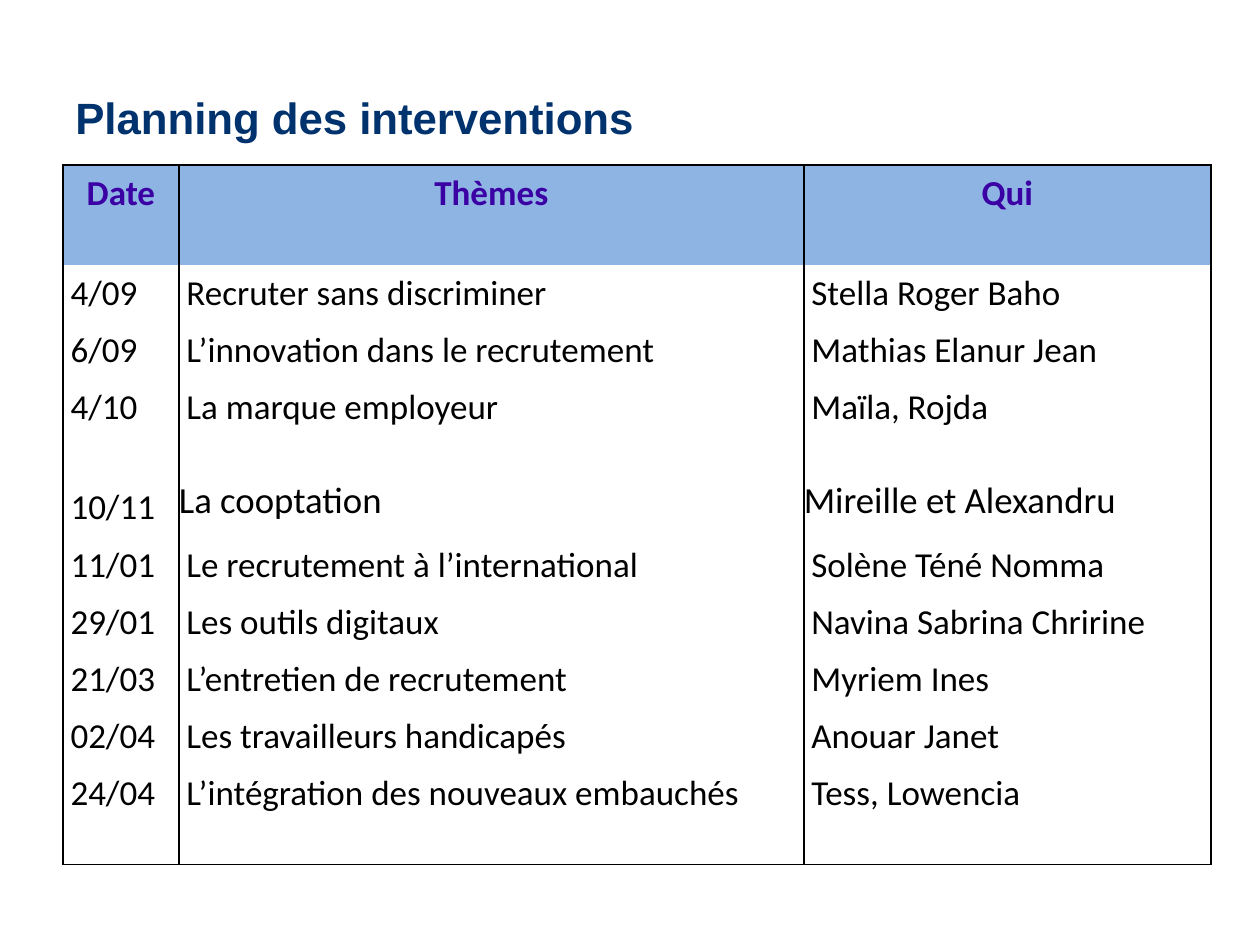
"""Builds the slide that lists the planned talks by date, theme and speakers."""
from dataclasses import dataclass

from lxml import etree
from pptx import Presentation
from pptx import util as u
from pptx.dml.color import RGBColor
from pptx.enum import text
from pptx.oxml import ns

NAVY, PURPLE, HEADER_BLUE, BLACK = "00326E", "3B00A4", "8EB4E3", "000000"
COLUMN_WIDTHS = (0.92, 4.96, 3.23)
SHORT_ROW, TALL_ROW = 0.45, 0.79
CELL_INSET = 0.06


@dataclass(frozen=True)
class Talk:
    date: str
    theme: str
    speakers: str
    height: float = SHORT_ROW
    size: float = 20
    inset: float = CELL_INSET


TALKS = (
    Talk("4/09", "Recruter sans discriminer", "Stella Roger Baho"),
    Talk("6/09", "L’innovation dans le recrutement", "Mathias Elanur Jean"),
    Talk("4/10", "La marque employeur", "Maïla, Rojda", height=TALL_ROW),
    Talk("10/11", "La cooptation", "Mireille et Alexandru", height=0.46, size=21, inset=0),
    Talk("11/01", "Le recrutement à l’international", "Solène Téné Nomma"),
    Talk("29/01", "Les outils digitaux", "Navina Sabrina Chririne"),
    Talk("21/03", "L’entretien de recrutement", "Myriem Ines"),
    Talk("02/04", "Les travailleurs handicapés", "Anouar Janet"),
    Talk("24/04", "L’intégration des nouveaux embauchés", "Tess, Lowencia", height=TALL_ROW),
)


def rgb(value: str) -> RGBColor:
    return RGBColor.from_string(value)


def write(frame, wording: str, *, size: float, font: str = "Calibri", color: str = BLACK,
          bold: bool = False, align=text.PP_ALIGN.LEFT) -> None:
    frame.word_wrap = True
    paragraph = frame.paragraphs[0]
    paragraph.alignment = align
    run = paragraph.add_run()
    run.text = wording
    run.font.name = font
    run.font.size = u.Pt(size)
    run.font.bold = bold
    run.font.color.rgb = rgb(color)


def set_insets(cell, inset: float) -> None:
    cell.margin_left = cell.margin_right = u.Inches(inset)
    cell.margin_top = cell.margin_bottom = u.Inches(inset)


def set_borders(cell, visible: str) -> None:
    properties = cell._tc.get_or_add_tcPr()
    for side in "LRTB":
        border = etree.SubElement(properties, ns.qn(f"a:ln{side}"), w=str(u.Pt(1)))
        if side in visible:
            fill = etree.SubElement(border, ns.qn("a:solidFill"))
            etree.SubElement(fill, ns.qn("a:srgbClr"), val=BLACK)
        else:
            etree.SubElement(border, ns.qn("a:noFill"))


def draw_title(slide, wording: str) -> None:
    title = slide.shapes.add_textbox(u.Inches(0.5), u.Inches(0.3), u.Inches(9), u.Inches(1.25))
    title.text_frame.vertical_anchor = text.MSO_ANCHOR.MIDDLE
    write(title.text_frame, wording, size=25, font="Arial", color=NAVY, bold=True)


def draw_header(table, headings: tuple[str, ...]) -> None:
    for cell, heading in zip(table.rows[0].cells, headings):
        set_insets(cell, CELL_INSET)
        set_borders(cell, "LRT")
        cell.fill.solid()
        cell.fill.fore_color.rgb = rgb(HEADER_BLUE)
        write(cell.text_frame, heading, size=20, color=PURPLE, bold=True,
              align=text.PP_ALIGN.CENTER)


def draw_talk(row, talk: Talk, borders: str) -> None:
    parts = (
        (talk.date, 20, CELL_INSET),
        (talk.theme, talk.size, talk.inset),
        (talk.speakers, talk.size, talk.inset),
    )
    for cell, (wording, size, inset) in zip(row.cells, parts):
        set_insets(cell, inset)
        set_borders(cell, borders)
        cell.fill.background()
        write(cell.text_frame, wording, size=size)


def draw_planning(slide) -> None:
    heights = [TALL_ROW] + [talk.height for talk in TALKS]
    table = slide.shapes.add_table(
        len(heights), len(COLUMN_WIDTHS), u.Inches(0.5), u.Inches(1.31),
        u.Inches(sum(COLUMN_WIDTHS)), u.Inches(sum(heights))).table
    table.first_row = table.horz_banding = False
    for column, width in zip(table.columns, COLUMN_WIDTHS):
        column.width = u.Inches(width)
    for row, height in zip(table.rows, heights):
        row.height = u.Inches(height)
    draw_header(table, ("Date", "Thèmes", "Qui"))
    for number, talk in enumerate(TALKS, start=1):
        draw_talk(table.rows[number], talk, "LRB" if talk is TALKS[-1] else "LR")


def main() -> None:
    deck = Presentation()
    deck.slide_width, deck.slide_height = u.Inches(10), u.Inches(7.5)
    slide = deck.slides.add_slide(deck.slide_layouts[6])
    draw_title(slide, "Planning des interventions")
    draw_planning(slide)
    deck.save("out.pptx")


if __name__ == "__main__":
    main()
